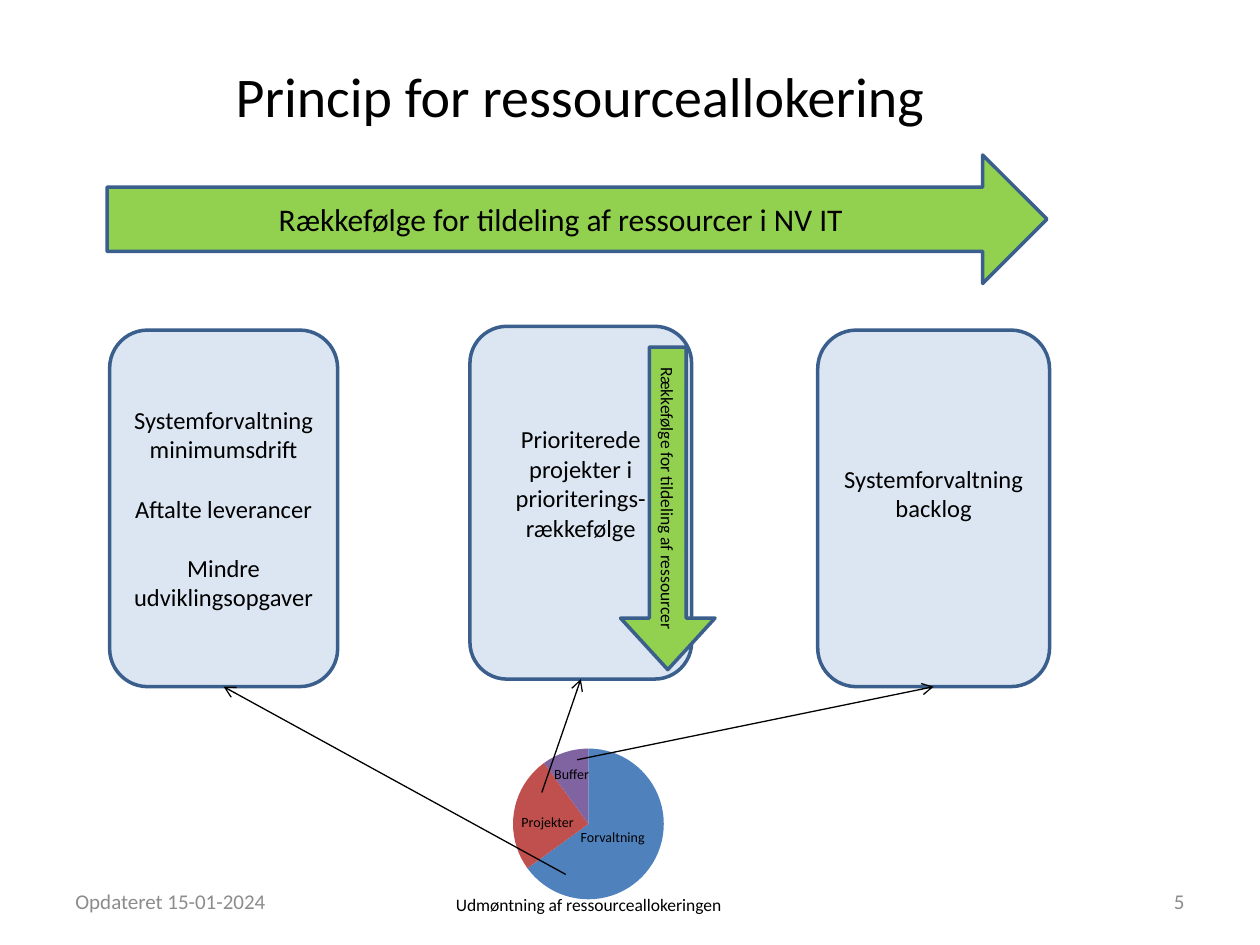
from lxml import etree
from pptx import Presentation
from pptx.chart.data import CategoryChartData
from pptx.dml.color import RGBColor
from pptx.enum.chart import XL_CHART_TYPE as ChartType
from pptx.enum.shapes import MSO_CONNECTOR as Connector, MSO_SHAPE as Shape
from pptx.enum.text import MSO_ANCHOR as Anchor, PP_ALIGN as Align
from pptx.oxml import parse_xml
from pptx.oxml.ns import nsdecls, qn
from pptx.util import Inches, Pt

FONT = "Calibri"
COLORS = {
    "text": "000000", "muted": "8C8C8C", "outline": "3A5F8C",
    "arrow": "92D050", "box": "DCE6F2",
}
TITLE = ("Princip for ressourceallokering", (1.77, 0.44, 7.28, 0.64))
ARROWS = [
    ("Rækkefølge for tildeling af ressourcer i NV IT", (0.85, 1.23, 7.46, 1.02), 18, 0, (0.5, 0.5)),
    ("Rækkefølge for tildeling af ressourcer", (4.02, 3.66, 2.56, 0.75), 10, 90, (0.391, 0.545)),
]
BOXES = [
    (["Systemforvaltning minimumsdrift", "Aftalte leverancer", "Mindre udviklingsopgaver"],
     (0.87, 2.62, 1.81, 2.83), 0.05),
    (["Prioriterede projekter i prioriterings-rækkefølge"], (3.73, 2.59, 1.76, 2.8), 0.36),
    (["Systemforvaltning backlog"], (6.49, 2.62, 1.84, 2.83), 0.29),
]
LINE_STARTS = [(4.49, 6.94), (4.3, 6.29), (4.58, 6.03)]
PIE_AREA = (3.72, 5.8, 1.9, 1.48)
PIE_DIAMETER = 1.2
PIE = [("1", 65, "4F81BD"), ("2", 25, "C0504D"), ("3", 0, "9BBB59"), ("4", 10, "8064A2")]
LABELS = [
    ("Forvaltning", (4.51, 6.53, 0.89, 0.24), 8),
    ("Buffer", (4.3, 6.03, 0.55, 0.24), 8),
    ("Projekter", (4.04, 6.41, 0.89, 0.24), 8),
    ("Udmøntning af ressourceallokeringen", (3.52, 7.05, 2.66, 0.27), 10),
]
FOOTERS = [
    ("Opdateret 15-01-2024", (0.5, 6.95, 2.33, 0.4), Align.LEFT),
    ("5", (7.17, 6.95, 2.33, 0.4), Align.RIGHT),
]


def color(name):
    return RGBColor.from_string(COLORS[name])


def inches(values):
    return [Inches(value) for value in values]


def write(shape, lines, size, align=Align.LEFT, anchor=Anchor.TOP, ink="text", gap=0):
    frame = shape.text_frame
    frame.text = "\n".join(lines)
    frame.word_wrap = True
    frame.vertical_anchor = anchor
    for index, paragraph in enumerate(frame.paragraphs):
        paragraph.alignment = align
        paragraph.space_before = Pt(gap if index else 0)
        for run in paragraph.runs:
            run.font.name = FONT
            run.font.size = Pt(size)
            run.font.color.rgb = color(ink)


def add_block(slide, kind, area, fill):
    shape = slide.shapes.add_shape(kind, *inches(area))
    shape.shadow.inherit = False
    shape.fill.solid()
    shape.fill.fore_color.rgb = color(fill)
    shape.line.color.rgb = color("outline")
    shape.line.width = Pt(2)
    return shape


def add_arrow(slide, text, area, size, rotation, adjustments):
    arrow = add_block(slide, Shape.RIGHT_ARROW, area, "arrow")
    arrow.rotation = rotation
    for index, value in enumerate(adjustments):
        arrow.adjustments[index] = value
    write(arrow, [text], size, Align.CENTER, Anchor.MIDDLE)


def add_box(slide, lines, area, bottom_inset):
    box = add_block(slide, Shape.ROUNDED_RECTANGLE, area, "box")
    write(box, lines, 14, Align.CENTER, Anchor.MIDDLE, gap=17)
    box.text_frame.margin_bottom = Inches(bottom_inset)
    return box


def add_pie(slide):
    data = CategoryChartData()
    data.categories = [name for name, _, _ in PIE]
    data.add_series("Series 1", [value for _, value, _ in PIE])
    chart = slide.shapes.add_chart(ChartType.PIE, *inches(PIE_AREA), data).chart
    chart.has_legend = False
    chart.has_title = False
    chart.font.name = FONT
    chart.font.size = Pt(18)
    chart.font.color.rgb = color("text")
    plot = chart.plots[0]
    plot.vary_by_categories = True
    for index, (_, _, fill) in enumerate(PIE):
        point = plot.series[0].points[index].format
        point.fill.solid()
        point.fill.fore_color.rgb = RGBColor.from_string(fill)
        point.line.fill.background()
    width, height = (round(PIE_DIAMETER / side, 2) for side in PIE_AREA[2:])
    places = {"x": (1 - width) / 2, "y": (1 - height) / 2, "w": width, "h": height}
    values = "".join(f'<c:{key} val="{value:.3f}"/>' for key, value in places.items())
    layout = parse_xml(
        f'<c:layout {nsdecls("c")}><c:manualLayout><c:layoutTarget val="inner"/>'
        f'<c:xMode val="edge"/><c:yMode val="edge"/>{values}</c:manualLayout></c:layout>')
    plot_area = chart.element.find(".//" + qn("c:plotArea"))
    for old_layout in plot_area.findall(qn("c:layout")):
        plot_area.remove(old_layout)
    plot_area.insert(0, layout)


def add_line(slide, start, box):
    line = slide.shapes.add_connector(Connector.STRAIGHT, *inches(start + start))
    line.end_connect(box, 2)
    line.line.color.rgb = color("text")
    line.line.width = Pt(0.75)
    etree.SubElement(line.line._get_or_add_ln(), qn("a:tailEnd"), type="arrow")
    etree.SubElement(line.element.spPr, qn("a:effectLst"))


def add_text(slide, text, area, size, **style):
    write(slide.shapes.add_textbox(*inches(area)), [text], size, **style)


def main():
    """Build the resource allocation slide."""
    presentation = Presentation()
    presentation.slide_width, presentation.slide_height = inches((10, 7.5))
    slide = presentation.slides.add_slide(presentation.slide_layouts[5])
    title = slide.shapes.title
    title.left, title.top, title.width, title.height = inches(TITLE[1])
    write(title, [TITLE[0]], 32)
    add_pie(slide)
    add_arrow(slide, *ARROWS[0])
    boxes = [add_box(slide, *box) for box in BOXES]
    add_arrow(slide, *ARROWS[1])
    for text, area, align in FOOTERS:
        add_text(slide, text, area, 12, align=align, anchor=Anchor.MIDDLE, ink="muted")
    for label in LABELS:
        add_text(slide, *label)
    for start, box in zip(LINE_STARTS, boxes):
        add_line(slide, start, box)
    presentation.save("out.pptx")


if __name__ == "__main__":
    main()
